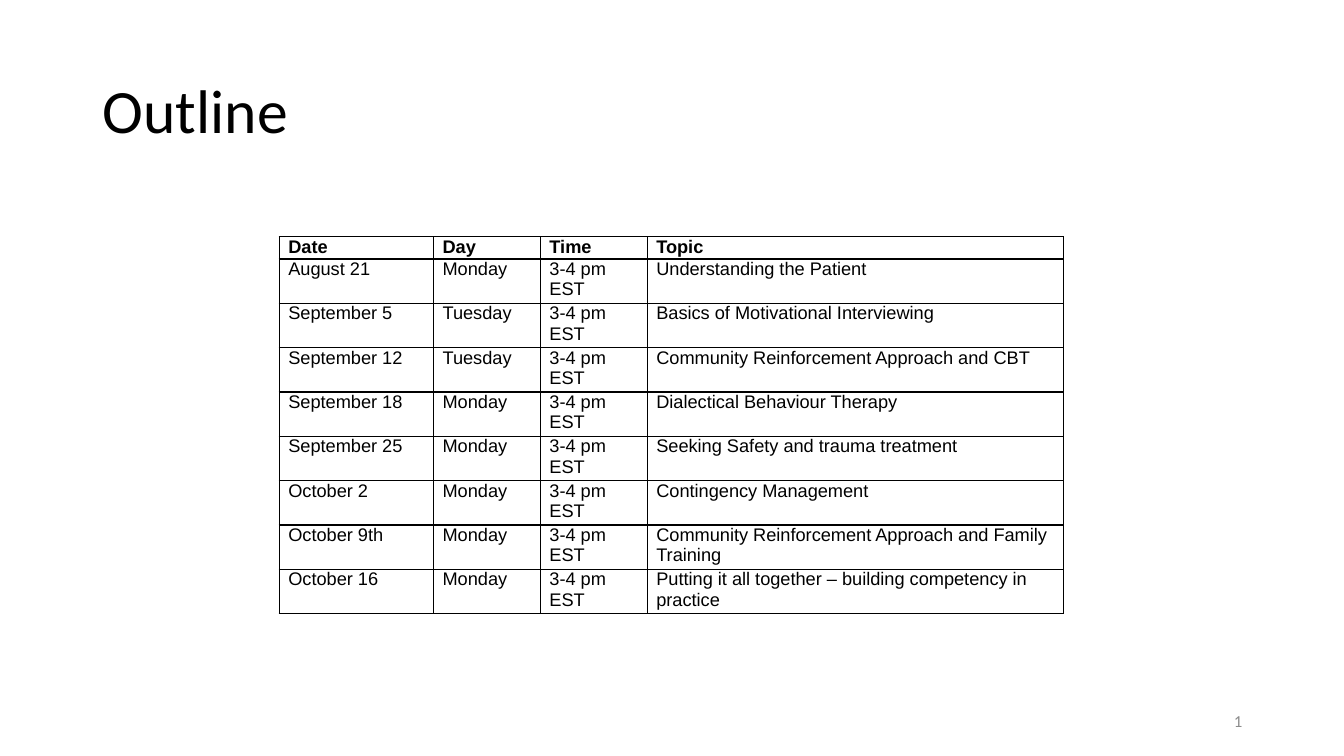
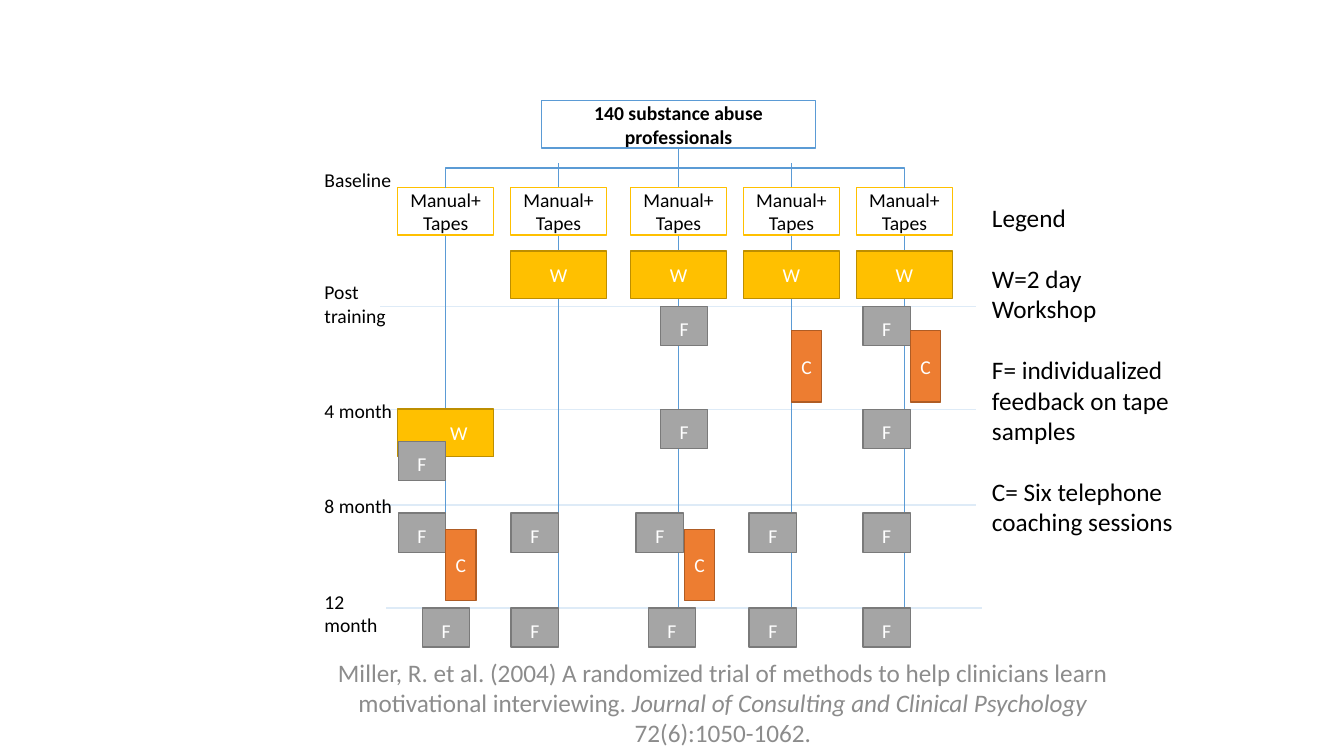
"""Build a two-slide deck: a session outline table and a training trial diagram."""
import pptx
import pptx.dml.color
import pptx.enum.shapes
import pptx.enum.text
import pptx.oxml
import pptx.oxml.ns
import pptx.util

Inches = pptx.util.Inches
Pt = pptx.util.Pt
Align = pptx.enum.text.PP_ALIGN
Anchor = pptx.enum.text.MSO_ANCHOR
Connector = pptx.enum.shapes.MSO_CONNECTOR
RECTANGLE = pptx.enum.shapes.MSO_SHAPE.RECTANGLE
PROCESS = pptx.enum.shapes.MSO_SHAPE.FLOWCHART_PROCESS

COLORS = {name: pptx.dml.color.RGBColor.from_string(value) for name, value in {
    "black": "000000", "white": "FFFFFF", "muted": "8C8C8C",
    "blue": "5B9BD5", "pale": "DEEBF7",
    "gold": "FFC000", "gold edge": "BD8E00",
    "gray": "A5A5A5", "gray edge": "7A7A7A",
    "orange": "ED7D31", "orange edge": "AF5C24",
}.items()}


def write_text(shape, lines, size, color="black", align=Align.LEFT, anchor=Anchor.TOP,
               font="Calibri", bold=False, wrap=True):
    """Fill a shape or cell with one paragraph per line, and return its text frame."""
    frame = shape.text_frame
    frame.word_wrap = wrap
    frame.vertical_anchor = anchor
    frame.text = "\n".join(lines)
    for paragraph in frame.paragraphs:
        paragraph.alignment = align
        paragraph.font.name = font
        paragraph.font.size = Pt(size)
        paragraph.font.bold = bold
        paragraph.font.color.rgb = COLORS[color]
    return frame


def add_line(slide, start, end, color="blue", kind=Connector.STRAIGHT):
    """Draw a one-point connector between two points in inches."""
    line = slide.shapes.add_connector(kind, *(Inches(value) for value in (*start, *end)))
    line.line.color.rgb = COLORS[color]
    line.line.width = Pt(1)
    properties = line._element.spPr
    properties.append(properties.makeelement(pptx.oxml.ns.qn("a:effectLst")))
    return line


presentation = pptx.Presentation()
presentation.slide_width = Inches(13.33)
presentation.slide_height = Inches(7.5)

slide = presentation.slides.add_slide(presentation.slide_layouts[5])
title = slide.shapes.title
title.left, title.top = Inches(0.92), Inches(0.4)
title.width, title.height = Inches(11.5), Inches(1.45)
frame = write_text(title, ["Outline"], 44, anchor=Anchor.MIDDLE)
frame.paragraphs[0].line_spacing = 0.9

sessions = [
    ("August 21", "Monday", "Understanding the Patient"),
    ("September 5", "Tuesday", "Basics of Motivational Interviewing"),
    ("September 12", "Tuesday", "Community Reinforcement Approach and CBT"),
    ("September 18", "Monday", "Dialectical Behaviour Therapy"),
    ("September 25", "Monday", "Seeking Safety and trauma treatment"),
    ("October 2", "Monday", "Contingency Management"),
    ("October 9th", "Monday", "Community Reinforcement Approach and Family Training"),
    ("October 16", "Monday", "Putting it all together – building competency in practice"),
]
rows = [("Date", "Day", "Time", "Topic")]
rows += [(date, day, "3-4 pm EST", topic) for date, day, topic in sessions]
widths = [1.53, 1.06, 1.06, 4.13]
table = slide.shapes.add_table(len(rows), len(widths), Inches(2.77), Inches(2.35),
                               Inches(sum(widths)), Inches(3.74)).table
table.first_row = table.horz_banding = False
for column, width in zip(table.columns, widths):
    column.width = Inches(width)
for row_index, values in enumerate(rows):
    table.rows[row_index].height = Inches(0.44 if row_index else 0.22)
    for column_index, value in enumerate(values):
        cell = table.cell(row_index, column_index)
        cell.margin_left = cell.margin_right = Inches(0.09)
        cell.margin_top = cell.margin_bottom = 0
        write_text(cell, [value], 13, font="Arial", bold=row_index == 0)
        cell_properties = cell._tc.get_or_add_tcPr()
        for side in ("lnL", "lnR", "lnT", "lnB"):
            cell_properties.append(pptx.oxml.parse_xml(
                f'<a:{side} {pptx.oxml.ns.nsdecls("a")} w="12700"><a:solidFill>'
                f'<a:srgbClr val="{COLORS["black"]}"/></a:solidFill></a:{side}>'))
        cell.fill.solid()
        cell.fill.fore_color.rgb = COLORS["white"]

number = slide.shapes.add_textbox(Inches(9.42), Inches(6.95), Inches(3), Inches(0.4))
frame = write_text(number, [""], 12, "muted", Align.RIGHT, Anchor.MIDDLE)
frame.paragraphs[0]._p.append(pptx.oxml.parse_xml(
    f'<a:fld {pptx.oxml.ns.nsdecls("a")} id="{{B6F15528-21DE-4FAA-801E-634DDDAF4B2B}}" '
    'type="slidenum"><a:rPr lang="en-US"/><a:t>1</a:t></a:fld>'))

slide = presentation.slides.add_slide(presentation.slide_layouts[6])
groups = [4.42, 5.54, 6.73, 7.85, 8.97]
post, month4, month8, month12 = visits = [3.04, 4.06, 5.01, 6.03]
baseline, workshop = 1.86, 2.49
box_width, box_height = 0.95, 0.47
root_bottom, branch_top = 1.47, 1.62

for top in visits:
    left = 3.83 if top == month12 else 3.77
    add_line(slide, (left, top), (left + 5.91, top), "pale")
for center in groups:
    bottom = month12 - 0.08 if center == groups[0] else month12
    add_line(slide, (center, bottom), (center, baseline + box_height))

citation = slide.shapes.add_textbox(Inches(3.06), Inches(6.64), Inches(8.22), Inches(0.66))
frame = write_text(citation, [""], 18, "muted", Align.CENTER, Anchor.MIDDLE)
for text, italic in [
    ("Miller, R. et al. (2004) A randomized trial of methods to help clinicians learn "
     "motivational interviewing. ", False),
    ("Journal of Consulting and Clinical Psychology ", True),
    ("72(6):1050-1062.", False),
]:
    run = frame.paragraphs[0].add_run()
    run.text = text
    run.font.italic = italic

styles = {
    "root": (RECTANGLE, 2.72, box_height, "white", "blue", "black", Anchor.MIDDLE),
    "manual": (PROCESS, box_width, box_height, "white", "gold", "black", Anchor.MIDDLE),
    "W": (PROCESS, box_width, box_height, "gold", "gold edge", "white", Anchor.MIDDLE),
    "F": (RECTANGLE, 0.47, 0.39, "gray", "gray edge", "white", Anchor.BOTTOM),
    "C": (RECTANGLE, 0.3, 0.71, "orange", "orange edge", "white", Anchor.MIDDLE),
}
captions = {"root": ["140 substance abuse professionals"], "manual": ["Manual+", "Tapes"]}
blocks = [("root", 5.37, root_bottom - box_height)]
blocks += [("manual", center - box_width / 2, baseline) for center in groups]
blocks += [("W", center - box_width / 2, workshop) for center in groups[1:]]
blocks += [("W", groups[0] - box_width / 2, month4)]
feedback = {
    post: [6.55, 8.56],
    month4: [6.55, 8.56],
    month4 + 0.32: [3.95],
    month8 + 0.08: [3.95, 5.07, 6.31, 7.43, 8.56],
    month12: [4.19, 5.07, 6.43, 7.43, 8.56],
}
blocks += [("F", left, top) for top, lefts in feedback.items() for left in lefts]
coaching = {post + 0.24: [7.85, 9.03], month8 + 0.24: [4.42, 6.79]}
blocks += [("C", left, top) for top, lefts in coaching.items() for left in lefts]

for kind, left, top in blocks:
    preset, width, height, fill, edge, color, anchor = styles[kind]
    shape = slide.shapes.add_shape(preset, Inches(left), Inches(top),
                                   Inches(width), Inches(height))
    shape.shadow.inherit = False
    shape.fill.solid()
    shape.fill.fore_color.rgb = COLORS[fill]
    shape.line.color.rgb = COLORS[edge]
    shape.line.width = Pt(1)
    frame = write_text(shape, captions.get(kind, [kind]), 14, color, Align.CENTER, anchor,
                       bold=kind == "root")
    if kind == "W" and top == month4:
        frame.margin_left = Inches(0.36)
    if kind == "C":
        frame.margin_left = frame.margin_right = Inches(0.05)

root_center = groups[2]
drop = baseline - root_bottom
for center, side, rotation in [(groups[-1], 1, 270), (groups[0], -1, 90)]:
    middle_x = (root_center + center) / 2
    middle_y = (root_bottom + baseline) / 2
    half_span = abs(center - root_center) / 2
    branch = add_line(slide, (middle_x + side * drop / 2, middle_y - half_span),
                      (middle_x - side * drop / 2, middle_y + half_span),
                      kind=Connector.ELBOW)
    branch._element.spPr.find(pptx.oxml.ns.qn("a:xfrm")).set("rot", str(rotation * 60000))
for center in groups[1:-1]:
    add_line(slide, (center, branch_top), (center, baseline))

for top, height, lines in [
    (1.62, 0.34, ["Baseline"]),
    (2.73, 0.57, ["Post", "training"]),
    (3.91, 0.34, ["4 month"]),
    (4.85, 0.34, ["8 month"]),
    (5.8, 0.34, ["12 month"]),
]:
    label = slide.shapes.add_textbox(Inches(3.12), Inches(top), Inches(0.9), Inches(height))
    write_text(label, lines, 14, wrap=False)

legend = slide.shapes.add_textbox(Inches(9.74), Inches(1.96), Inches(2.01), Inches(3.43))
frame = write_text(legend, [
    "Legend",
    "W=2 day Workshop",
    "F= individualized feedback on tape samples",
    "C= Six telephone coaching sessions",
], 18)
for paragraph in frame.paragraphs[1:]:
    paragraph.space_before = Pt(22)

presentation.save("out.pptx")
